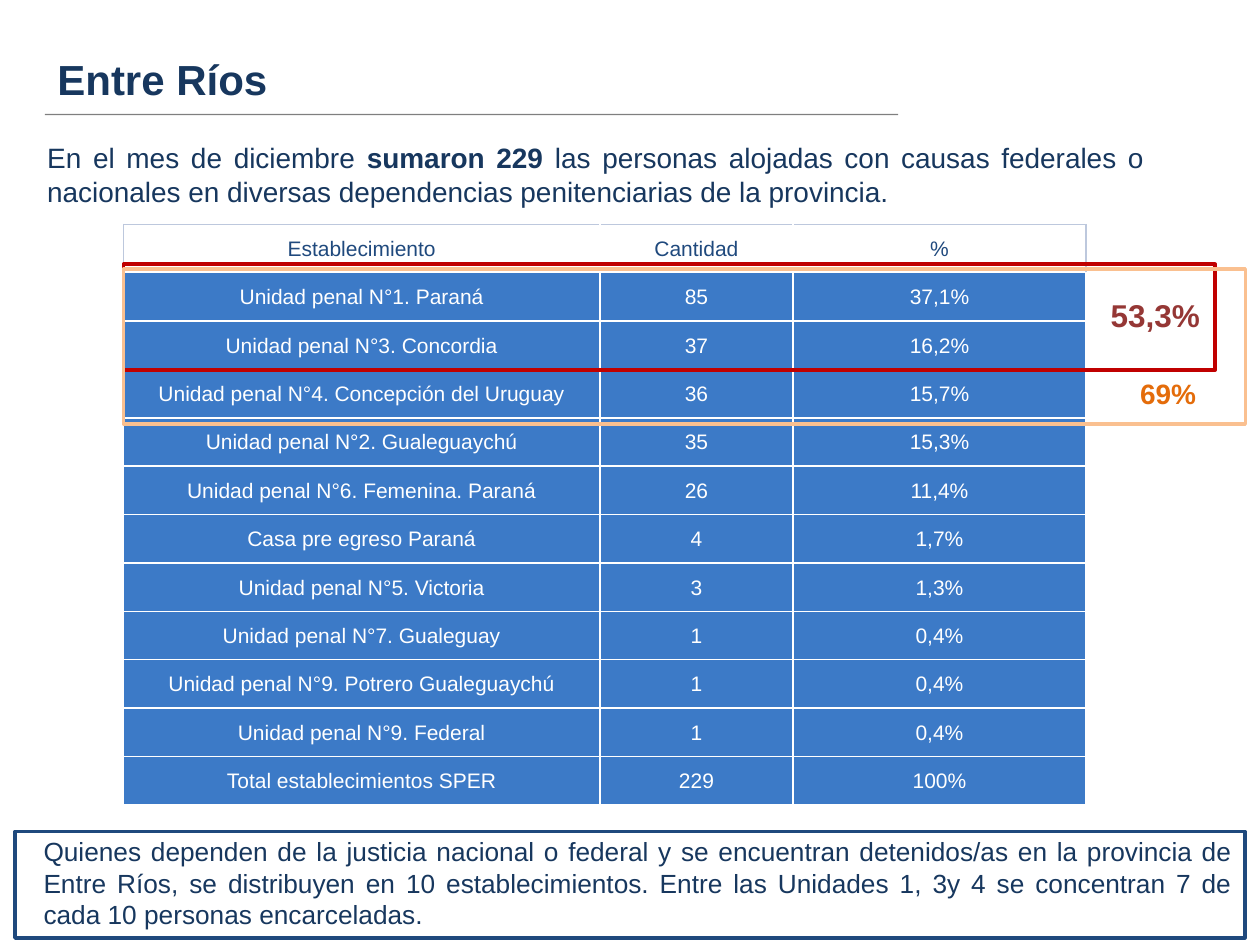
from lxml import etree
from pptx import Presentation
from pptx.dml.color import RGBColor
from pptx.enum import shapes, text
from pptx.oxml import ns
from pptx.util import Pt

FONT = "Arial"
COLORS = {
    "navy": "17375E", "blue": "1F497D", "cell": "3C7AC7", "white": "FFFFFF",
    "edge": "BDC8DD", "black": "000000", "red": "C00000", "dark_red": "953735",
    "peach": "FAC090", "orange": "E46C0A",
}
HEADER = ("Establecimiento", "Cantidad", "%")
ROWS = [
    ("Unidad penal N°1. Paraná", "85", "37,1%"),
    ("Unidad penal N°3. Concordia", "37", "16,2%"),
    ("Unidad penal N°4. Concepción del Uruguay", "36", "15,7%"),
    ("Unidad penal N°2. Gualeguaychú", "35", "15,3%"),
    ("Unidad penal N°6. Femenina. Paraná", "26", "11,4%"),
    ("Casa pre egreso Paraná", "4", "1,7%"),
    ("Unidad penal N°5. Victoria", "3", "1,3%"),
    ("Unidad penal N°7. Gualeguay", "1", "0,4%"),
    ("Unidad penal N°9. Potrero Gualeguaychú", "1", "0,4%"),
    ("Unidad penal N°9. Federal", "1", "0,4%"),
    ("Total establecimientos SPER", "229", "100%"),
]
COL_WIDTHS = (272.2, 110.4, 167.4)
ROW_HEIGHT = 27.65


def rgb(name):
    return RGBColor.from_string(COLORS[name])


def format_run(r, size, color, bold=False):
    r.font.name = FONT
    r.font.size = Pt(size)
    r.font.bold = bold
    r.font.color.rgb = rgb(color)


def add_text(s, box, runs, size, color, align=text.PP_ALIGN.LEFT, wrap=True):
    """Add a one-paragraph text box; runs are (wording, bold) pairs."""
    tf = s.shapes.add_textbox(*map(Pt, box)).text_frame
    tf.word_wrap = wrap
    p = tf.paragraphs[0]
    p.alignment = align
    for wording, bold in runs:
        r = p.add_run()
        r.text = wording
        format_run(r, size, color, bold)


def add_frame(s, box, color):
    sp = s.shapes.add_shape(shapes.MSO_SHAPE.RECTANGLE, *map(Pt, box))
    sp.shadow.inherit = False
    sp.fill.background()
    sp.line.color.rgb = rgb(color)
    sp.line.width = Pt(2)


def add_rule(s, x1, x2, y):
    """Add the half-transparent line under the title."""
    line = s.shapes.add_connector(
        shapes.MSO_CONNECTOR.STRAIGHT, Pt(x1), Pt(y), Pt(x2), Pt(y))
    line.line.color.rgb = rgb("black")
    line.line.width = Pt(0.75)
    color = line._element.spPr.find(".//" + ns.qn("a:srgbClr"))
    etree.SubElement(color, ns.qn("a:alpha"), val="50000")
    etree.SubElement(line._element.spPr, ns.qn("a:effectLst"))


def set_border(cell, side, color, width):
    ln = etree.SubElement(cell._tc.get_or_add_tcPr(), ns.qn("a:ln" + side),
                          w=str(Pt(width)))
    fill = etree.SubElement(ln, ns.qn("a:solidFill"))
    etree.SubElement(fill, ns.qn("a:srgbClr"), val=COLORS[color])


def format_cell(cell, wording, is_header, outer_sides):
    """Fill in a cell; outer_sides are the sides with the pale edge."""
    for side in "LRTB":
        if side in outer_sides:
            set_border(cell, side, "edge", 0.75)
        else:
            set_border(cell, side, "white", 1)
    cell.fill.solid()
    cell.fill.fore_color.rgb = rgb("white" if is_header else "cell")
    cell.margin_left = cell.margin_right = cell.margin_top = Pt(0.7)
    cell.margin_bottom = 0
    cell.vertical_anchor = text.MSO_ANCHOR.MIDDLE
    cell.text_frame.text = wording
    p = cell.text_frame.paragraphs[0]
    p.alignment = text.PP_ALIGN.CENTER
    format_run(p.runs[0], 12, "blue" if is_header else "white")


def add_prison_table(s, left, top):
    data = [HEADER] + ROWS
    table = s.shapes.add_table(
        len(data), len(HEADER), Pt(left), Pt(top),
        Pt(sum(COL_WIDTHS)), Pt(ROW_HEIGHT * len(data))).table
    for column, width in zip(table.columns, COL_WIDTHS):
        column.width = Pt(width)
    header_sides = ("LT", "T", "TR")
    for i, values in enumerate(data):
        table.rows[i].height = Pt(ROW_HEIGHT)
        for j, wording in enumerate(values):
            sides = header_sides[j] if i == 0 else ""
            format_cell(table.cell(i, j), wording, i == 0, sides)


def main():
    prs = Presentation()
    prs.slide_width, prs.slide_height = Pt(720), Pt(540)
    s = prs.slides.add_slide(prs.slide_layouts[6])
    justify = text.PP_ALIGN.JUSTIFY

    add_text(s, (25.7, 27, 533, 44.6), [("Entre Ríos", True)], 24, "navy")
    add_rule(s, 25.7, 513.2, 65.4)
    add_text(s, (19.9, 77, 640.8, 51), [
        ("En el mes de diciembre ", False),
        ("sumaron 229 ", True),
        ("las personas alojadas con causas federales o nacionales en "
         "diversas dependencias penitenciarias de la provincia.", False),
    ], 16, "navy", justify)

    add_prison_table(s, 70.6, 128.2)
    add_frame(s, (70.6, 151, 623.8, 60.4), "red")
    add_text(s, (627.5, 165.8, 66.2, 29), [("53,3%", True)], 18, "dark_red",
             wrap=False)
    add_frame(s, (70.6, 153.8, 641, 88.6), "peach")
    add_text(s, (644.4, 211.7, 63.4, 26.6), [("69%", True)], 16, "orange")

    add_text(s, (17.8, 473.8, 693.4, 62), [
        ("Quienes dependen de la justicia nacional o federal y se encuentran "
         "detenidos/as en la provincia de Entre Ríos, se distribuyen en 10 "
         "establecimientos. Entre las Unidades 1, 3y 4 se concentran 7 de "
         "cada 10 personas encarceladas.", False),
    ], 15, "navy", justify)
    add_frame(s, (8.6, 475.2, 702.8, 60.8), "blue")
    prs.save("out.pptx")


if __name__ == "__main__":
    main()
